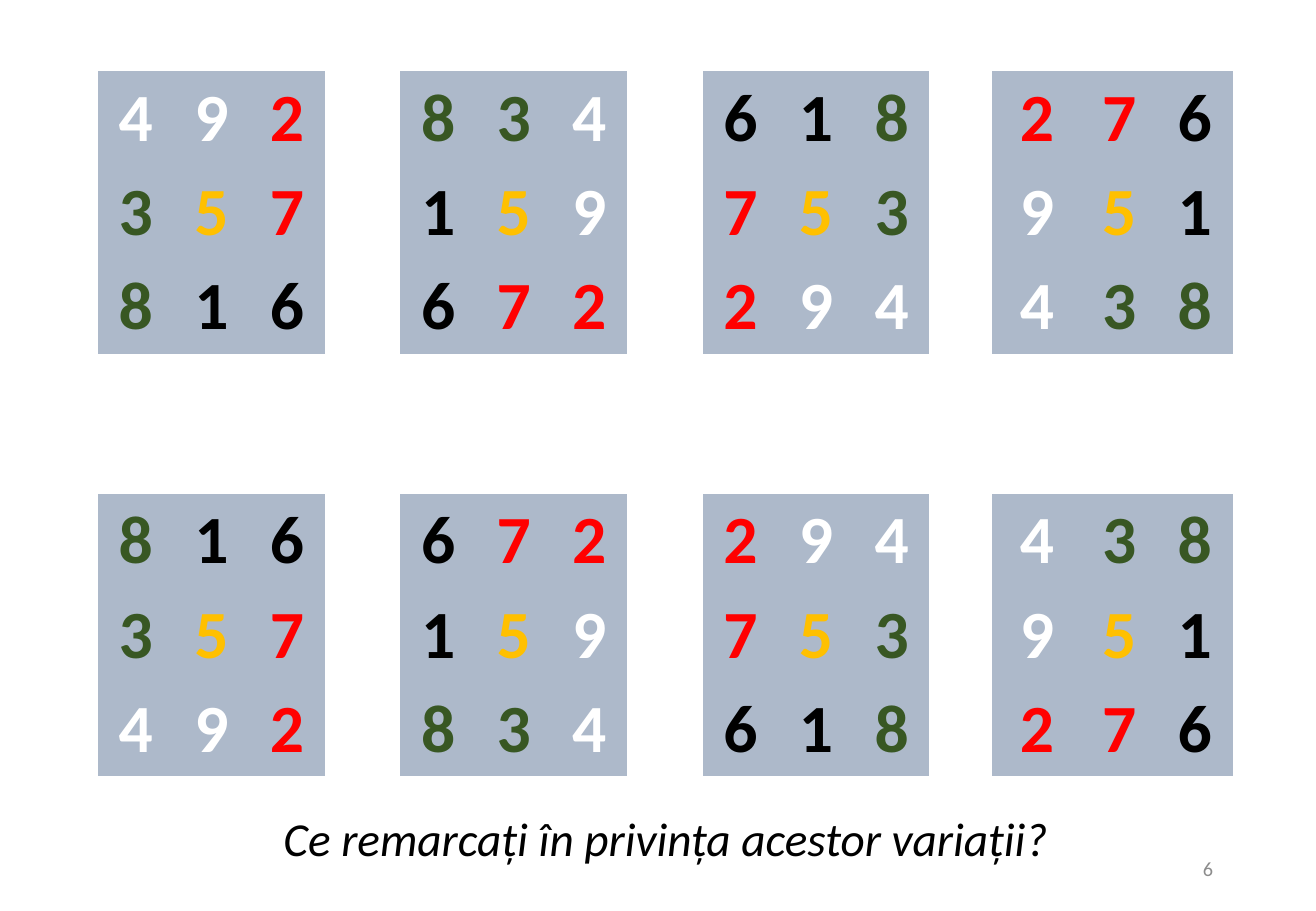
from dataclasses import dataclass
from pptx import Presentation
from pptx.dml.color import RGBColor
from pptx.enum.text import MSO_ANCHOR, PP_ALIGN
from pptx.util import Pt

QUESTION = "Ce remarcați în privința acestor variații?"
NUMBER = "6"
SQUARES = [
    ("492", "357", "816"),
    ("834", "159", "672"),
    ("618", "753", "294"),
    ("276", "951", "438"),
]


@dataclass(frozen=True)
class Theme:
    font: str = "Calibri"
    panel: str = "ADB9CA"
    ink: str = "000000"
    muted: str = "8C8C8C"
    digit: int = 40
    title: int = 28
    small: int = 12


THEME = Theme()
DIGIT_COLORS = {
    "49": "FFFFFF", "27": "FF0000", "38": "385723", "5": "FFC000", "16": THEME.ink,
}
COLORS = {digit: color for digits, color in DIGIT_COLORS.items() for digit in digits}

# Lengths in px
SCALE = 914400 / 121.5
LEFT, TOP, WIDTH = 98, 71, 1135
ROW, GAP_ROW = 94, 70
NARROW, WIDE = 63, 89  # last gap, and first column of the last square
SIDE = 3
STEP = SIDE + 1
LOWER = SIDE + 2  # first table row of the mirrored squares
PLAIN_STYLE = "{2D5ABB26-0587-4C30-8999-92F81FD0307C}"


def px(length):
    return round(length * SCALE)


def box(*lengths):
    return [px(length) for length in lengths]


def style(par, size, color, align, bold=False, italic=False):
    par.alignment = align
    font = par.font
    font.name, font.size = THEME.font, Pt(size)
    font.bold, font.italic = bold, italic
    font.color.rgb = RGBColor.from_string(color)


def add_title(slide):
    title = slide.shapes.title
    title.left, title.top, title.width, title.height = box(LEFT, 791, WIDTH, 100)
    frame = title.text_frame
    frame.text = QUESTION
    frame.vertical_anchor = MSO_ANCHOR.MIDDLE
    par = frame.paragraphs[0]
    par.line_spacing = 0.9
    style(par, THEME.title, THEME.ink, PP_ALIGN.CENTER, italic=True)


def fill_cell(cell, digit):
    cell.fill.solid()
    cell.fill.fore_color.rgb = RGBColor.from_string(THEME.panel)
    cell.text = digit
    style(cell.text_frame.paragraphs[0], THEME.digit, COLORS[digit],
          PP_ALIGN.CENTER, bold=True)


def add_squares(slide):
    """Top: the four rotations; bottom: each one mirrored upside down."""
    cols = STEP * len(SQUARES) - 1
    heights = [ROW] * SIDE + [GAP_ROW] * 2 + [ROW] * SIDE
    widths = [(WIDTH - NARROW - WIDE) / (cols - 2)] * cols
    widths[-SIDE - 1], widths[-SIDE] = NARROW, WIDE

    frame = slide.shapes.add_table(
        len(heights), cols, *box(LEFT, TOP, WIDTH, sum(heights)))
    table = frame.table
    table.first_row = table.horz_banding = False
    frame._element.xpath(".//a:tableStyleId")[0].text = PLAIN_STYLE
    for row, height in zip(table.rows, heights):
        row.height = px(height)
    for col, width in zip(table.columns, widths):
        col.width = px(width)
    for cell in table.iter_cells():
        cell.margin_left = cell.margin_right = px(10)
        cell.margin_top = cell.margin_bottom = px(6)
        cell.fill.background()

    for index, square in enumerate(SQUARES):
        for first, lines in ((0, square), (LOWER, square[::-1])):
            for row, line in enumerate(lines, first):
                for col, digit in enumerate(line, index * STEP):
                    fill_cell(table.cell(row, col), digit)


def add_number(slide):
    frame = slide.shapes.add_textbox(*box(929, 844, 296, 49)).text_frame
    frame.word_wrap = True
    frame.vertical_anchor = MSO_ANCHOR.MIDDLE
    frame.text = NUMBER
    style(frame.paragraphs[0], THEME.small, THEME.muted, PP_ALIGN.RIGHT)


def main():
    prs = Presentation()
    prs.slide_width, prs.slide_height = box(1316, 911)
    slide = prs.slides.add_slide(prs.slide_layouts[5])
    add_title(slide)
    add_squares(slide)
    add_number(slide)
    prs.save("out.pptx")


if __name__ == "__main__":
    main()
